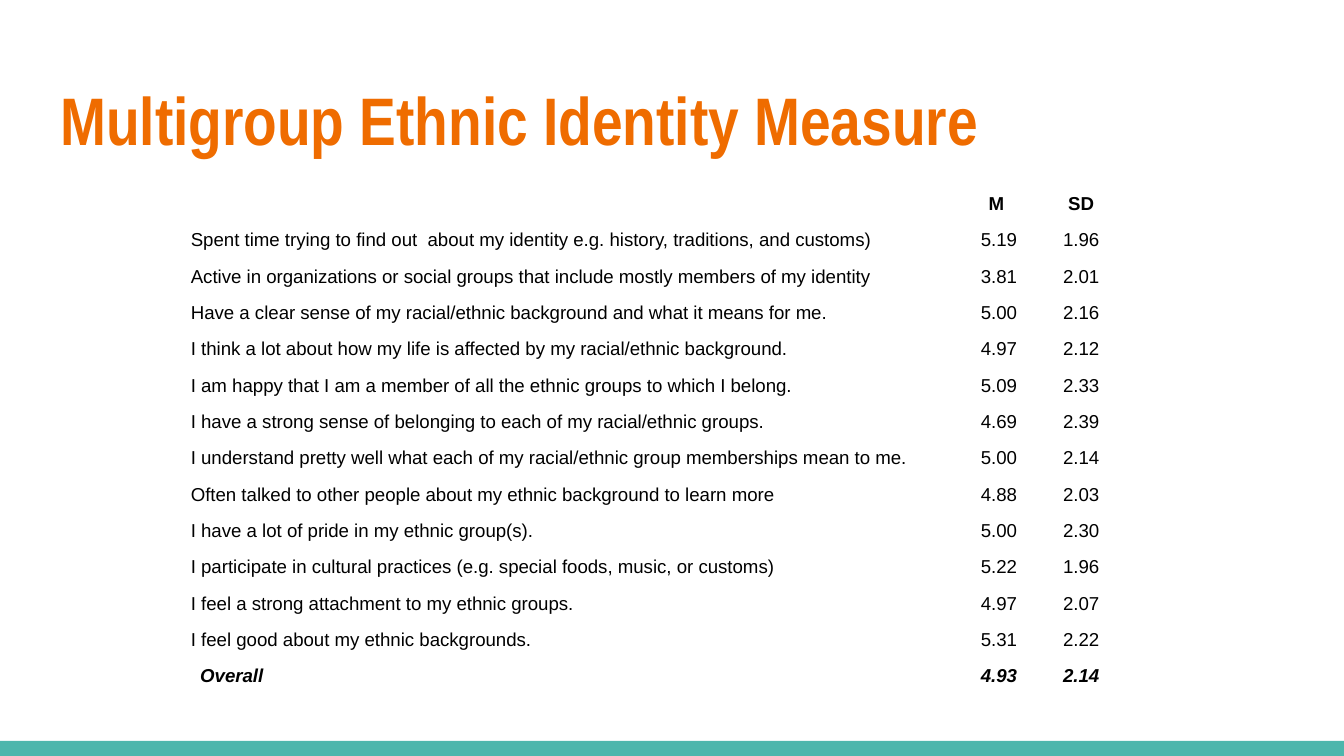
from pptx import Presentation
from pptx.dml.color import RGBColor
from pptx.enum.shapes import MSO_SHAPE
from pptx.enum.text import MSO_ANCHOR, PP_ALIGN
from pptx.util import Inches, Pt

RECT = MSO_SHAPE.RECTANGLE
TOP, MIDDLE = MSO_ANCHOR.TOP, MSO_ANCHOR.MIDDLE
LEFT, CENTER = PP_ALIGN.LEFT, PP_ALIGN.CENTER

WIDTH = 10
HEIGHT = WIDTH * 9 / 16
PAD = 0.1
INDENT = 0.07
SHARES = (0.826, 0.087, 0.087)  # column widths as shares of the table

HEAD = ("", "M ", "SD")
ITEMS = [
    ("Spent time trying to find out  about my identity e.g. history, traditions, and customs)", "5.19", "1.96"),
    ("Active in organizations or social groups that include mostly members of my identity", "3.81", "2.01"),
    ("Have a clear sense of my racial/ethnic background and what it means for me.", "5.00", "2.16"),
    ("I think a lot about how my life is affected by my racial/ethnic background.", "4.97", "2.12"),
    ("I am happy that I am a member of all the ethnic groups to which I belong.", "5.09", "2.33"),
    ("I have a strong sense of belonging to each of my racial/ethnic groups.", "4.69", "2.39"),
    ("I understand pretty well what each of my racial/ethnic group memberships mean to me.", "5.00", "2.14"),
    ("Often talked to other people about my ethnic background to learn more", "4.88", "2.03"),
    ("I have a lot of pride in my ethnic group(s).", "5.00", "2.30"),
    ("I participate in cultural practices (e.g. special foods, music, or customs)", "5.22", "1.96"),
    ("I feel a strong attachment to my ethnic groups.", "4.97", "2.07"),
    ("I feel good about my ethnic backgrounds.", "5.31", "2.22"),
]
TOTAL = ("Overall", "4.93", "2.14")


def color(code):
    return RGBColor.from_string(code)


def place(box):
    return [Inches(side) for side in box]


def write(frame, text, face, size, code, bold=False, slant=False, align=LEFT):
    frame.text = text
    line = frame.paragraphs[0]
    line.alignment = align
    if not text:
        # The end mark sets the height of an empty cell
        line._p.get_or_add_endParaRPr().set("sz", str(size * 100))
    for run in line.runs:
        font = run.font
        font.name, font.size = face, Pt(size)
        font.bold, font.italic = bold, slant
        font.color.rgb = color(code)


def add_bar(slide, box):
    bar = slide.shapes.add_shape(RECT, *place(box))
    bar.shadow.inherit = False
    bar.fill.solid()
    bar.fill.fore_color.rgb = color("4DB6AC")
    bar.line.fill.background()


def add_title(slide, box):
    frame = slide.shapes.add_textbox(*place(box)).text_frame
    frame.word_wrap = True
    frame.vertical_anchor = MIDDLE
    frame.margin_left = frame.margin_right = Inches(PAD)
    frame.margin_top = frame.margin_bottom = Inches(PAD)
    write(frame, "Multigroup Ethnic Identity Measure", "Arial Narrow", 36, "EF6C00", bold=True)


def add_scores(slide, box):
    rows = [HEAD, *ITEMS, TOTAL]
    table = slide.shapes.add_table(len(rows), len(HEAD), *place(box)).table
    table.first_row = table.horz_banding = False
    for col, share in zip(table.columns, SHARES):
        col.width = Inches(box[2] * share)
    for r, row in enumerate(rows):
        table.rows[r].height = Inches(box[3] / len(rows))
        for c, text in enumerate(row):
            cell = table.cell(r, c)
            cell.fill.background()
            cell.vertical_anchor = TOP
            shift = INDENT if row is TOTAL and c == 0 else 0
            cell.margin_left, cell.margin_right = Inches(PAD + shift), Inches(PAD)
            cell.margin_top = cell.margin_bottom = 0
            write(cell.text_frame, text, "Arial", 10, "000000",
                  bold=row in (HEAD, TOTAL), slant=row is TOTAL,
                  align=CENTER if c else LEFT)


def main():
    deck = Presentation()
    deck.slide_width, deck.slide_height = Inches(WIDTH), Inches(HEIGHT)
    slide = deck.slides.add_slide(deck.slide_layouts[6])
    # Footer band, heading, table of means and deviations
    add_bar(slide, (0, HEIGHT * 0.98, WIDTH, HEIGHT * 0.02))
    add_title(slide, (0.35, 0.5, 9.32, 0.77))
    add_scores(slide, (1.32, 1.44, 7.03, 3.79))
    deck.save("out.pptx")


if __name__ == "__main__":
    main()
